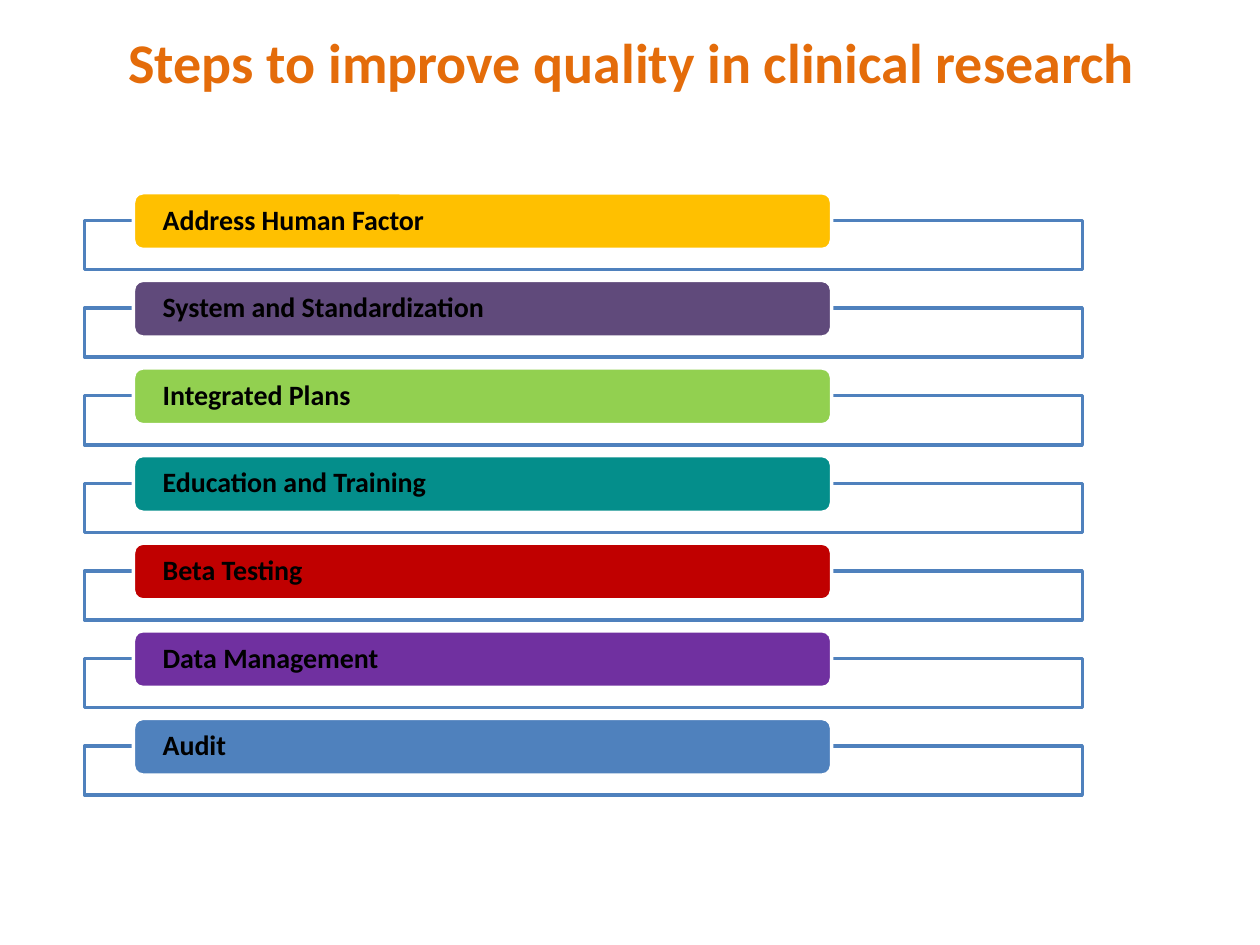
"""Build the slide on steps to improve quality in clinical research."""
from lxml.etree import SubElement
from pptx import Presentation
from pptx.dml.color import RGBColor
from pptx.enum.shapes import MSO_SHAPE as Shape
from pptx.enum.text import MSO_ANCHOR as Anchor, MSO_AUTO_SIZE as AutoSize, PP_ALIGN as Align
from pptx.oxml.ns import qn
from pptx.util import Inches, Pt

STEPS = [
    ("Address Human Factor", "FFC000"),
    ("System and Standardization", "604A7B"),
    ("Integrated Plans", "92D050"),
    ("Education and Training", "048E8B"),
    ("Beta Testing", "C00000"),
    ("Data Management", "7030A0"),
    ("Audit", "4F81BD"),
]
FIRST_FRAME_TOP, FIRST_BAR_TOP, STEP_PITCH = 23.33, 20.4, 9.27


def color(code):
    """Turn a hex string into a colour."""
    return RGBColor.from_string(code)


def write(shape, text, size, ink, anchor, margins, spacing=1.0):
    """Put one bold, left-aligned paragraph into a shape."""
    frame = shape.text_frame
    frame.word_wrap = True
    frame.vertical_anchor = anchor
    frame.margin_left = frame.margin_right = Inches(margins[0])
    frame.margin_top = frame.margin_bottom = Inches(margins[1])
    para = frame.paragraphs[0]
    para.alignment = Align.LEFT
    para.line_spacing = spacing
    span = para.add_run()
    span.text = text
    span.font.name, span.font.size, span.font.bold = "Calibri", Pt(size), True
    span.font.color.rgb = color(ink)


class StepSlide:
    """Hold the style and the page; lengths are percent of the slide's size."""

    accent, paper, ink, heading = "4F81BD", "FFFFFF", "000000", "E46C0A"
    line_width = Pt(2)

    def __init__(self, deck):
        """Add a title-only page to the deck."""
        self.column = deck.slide_width / 100
        self.row = deck.slide_height / 100
        self.page = deck.slides.add_slide(deck.slide_layouts[5])

    def place(self, left, top, width, height):
        """Convert grid lengths to slide units."""
        return (round(left * self.column), round(top * self.row),
                round(width * self.column), round(height * self.row))

    def title(self, text):
        """Move and format the title placeholder."""
        box = self.page.shapes.title
        box.left, box.top, box.width, box.height = self.place(9.2, 2.27, 90.8, 8.53)
        write(box, text, 32, self.heading, Anchor.TOP, (0.1, 0.05))
        box.text_frame.auto_size = AutoSize.SHAPE_TO_FIT_TEXT

    def block(self, kind, bounds, fill, line):
        """Draw a filled and outlined shape."""
        box = self.page.shapes.add_shape(kind, *self.place(*bounds))
        box.shadow.inherit = False
        box.fill.solid()
        box.fill.fore_color.rgb = color(fill)
        box.line.color.rgb = color(line)
        box.line.width = self.line_width
        return box

    def frame(self, top):
        """Draw the wide, slightly transparent outline behind a step."""
        box = self.block(Shape.RECTANGLE, (6.7, top, 79.2, 5.2), self.paper, self.accent)
        tint = next(box.fill._xPr.iter(qn("a:srgbClr")))
        SubElement(tint, qn("a:alpha"), val="90000")

    def bar(self, top, text, fill):
        """Draw the rounded bar that names a step."""
        box = self.block(Shape.ROUNDED_RECTANGLE, (10.6, top, 55.4, 6), fill, self.paper)
        write(box, text, 16, self.ink, Anchor.MIDDLE, (0.21, 0), spacing=0.9)


def main():
    """Create the deck and save it."""
    deck = Presentation()
    deck.slide_width, deck.slide_height = Inches(10), Inches(7.5)
    slide = StepSlide(deck)
    slide.title("Steps to improve quality in clinical research")
    for index, (text, fill) in enumerate(STEPS):
        offset = index * STEP_PITCH
        slide.frame(FIRST_FRAME_TOP + offset)
        slide.bar(FIRST_BAR_TOP + offset, text, fill)
    deck.save("out.pptx")


if __name__ == "__main__":
    main()
